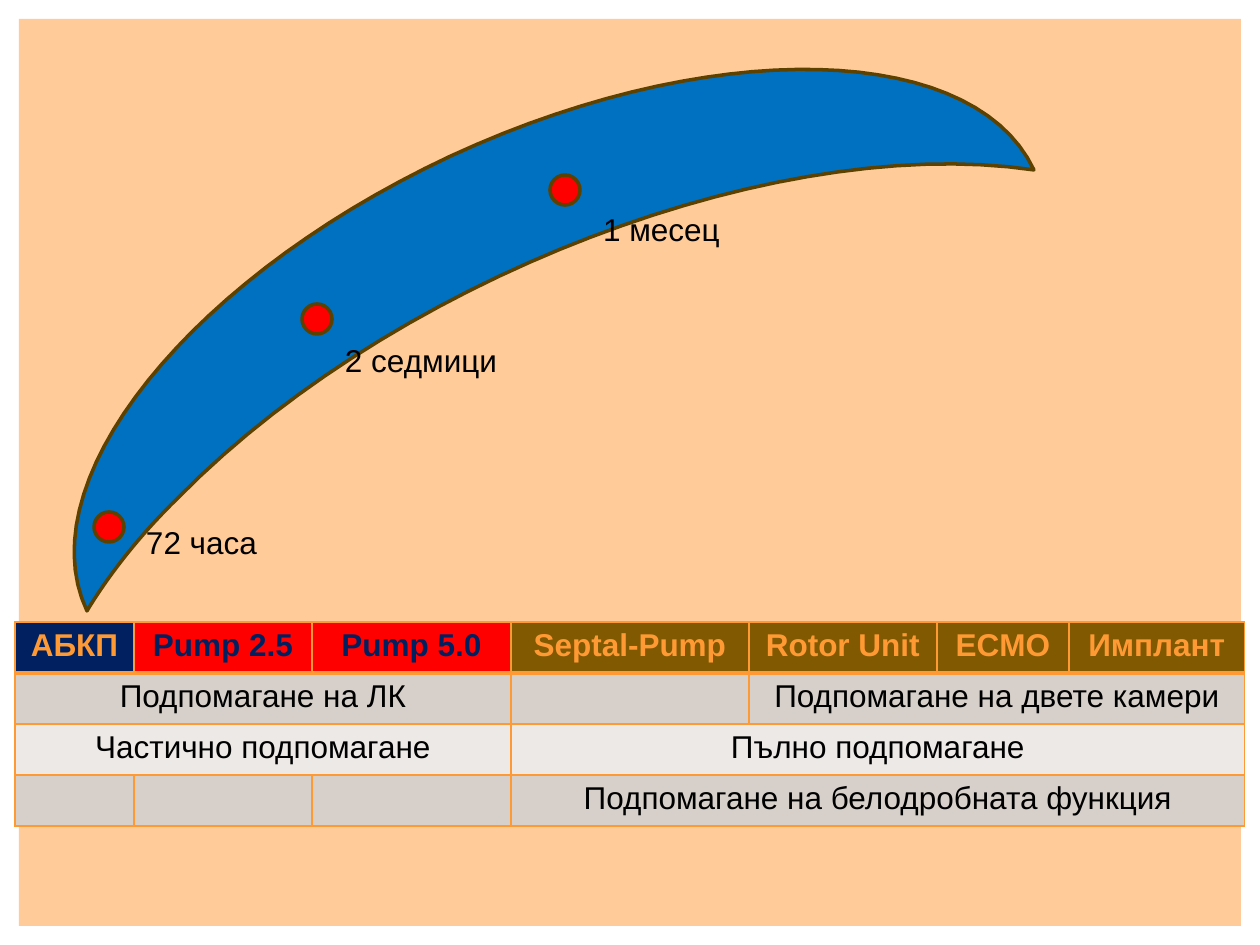
from lxml import etree
from pptx import Presentation
from pptx import util as u
from pptx.dml.color import RGBColor
from pptx.enum import shapes, text
from pptx.oxml import ns

EMU_PER_PX = 914400 / 126
STEPS = 30
FONT = "Arial"
ORANGE = RGBColor(0xFF, 0x99, 0x33)
NAVY = RGBColor(0x00, 0x20, 0x60)
RED = RGBColor(0xFF, 0x00, 0x00)
BROWN = RGBColor(0x80, 0x59, 0x00)
OUTLINE = RGBColor(0x5D, 0x41, 0x00)
BLUE = RGBColor(0x00, 0x70, 0xC0)
BLACK = RGBColor(0x00, 0x00, 0x00)
BAND_DARK = RGBColor(0xD7, 0xD0, 0xCA)
BAND_LIGHT = RGBColor(0xEC, 0xE9, 0xE6)

CRESCENT_START = (87, 611)
CRESCENT_CURVES = [
    ((26, 481), (190, 278), (451, 156)),
    ((713, 35), (974, 42), (1034, 170)),
    ((777, 132), (394, 278), (178, 498)),
    ((141, 534), (110, 573), (87, 611)),
]
# Marker left and top, label left, top and width, label
MILESTONES = [
    (94, 512, 140, 517, 134, "72 часа"),
    (302, 304, 339, 335, 166, "2 седмици"),
    (550, 175, 597, 204, 131, "1 месец"),
]
COLUMN_WIDTHS = [119, 178, 199, 238, 188, 132, 176]
ROW_HEIGHT = 51
HEADERS = [
    ("АБКП", NAVY, ORANGE),
    ("Pump 2.5", RED, NAVY),
    ("Pump 5.0", RED, NAVY),
    ("Septal-Pump", BROWN, ORANGE),
    ("Rotor Unit", BROWN, ORANGE),
    ("ECMO", BROWN, ORANGE),
    ("Имплант", BROWN, ORANGE),
]
BANDS = [BAND_DARK, BAND_LIGHT, BAND_DARK]
# Row, first column, last column, text
SPANS = [
    (1, 0, 2, "Подпомагане на ЛК"),
    (1, 4, 6, "Подпомагане на двете камери"),
    (2, 0, 2, "Частично подпомагане"),
    (2, 3, 6, "Пълно подпомагане"),
    (3, 3, 6, "Подпомагане на белодробната функция"),
]


def px(length):
    return u.Emu(round(length * EMU_PER_PX))


def paint(shape, fill, line=None):
    shape.shadow.inherit = False
    shape.fill.solid()
    shape.fill.fore_color.rgb = fill
    if line is None:
        shape.line.fill.background()
    else:
        shape.line.color.rgb = line
        shape.line.width = u.Pt(2)


def add_backdrop(slide):
    """Add the half-transparent panel behind everything."""
    panel = slide.shapes.add_shape(
        shapes.MSO_SHAPE.RECTANGLE, px(19), px(19), px(1222), px(907))
    paint(panel, ORANGE)
    color = panel.fill._xPr.find(".//" + ns.qn("a:srgbClr"))
    etree.SubElement(color, ns.qn("a:alpha"), val="50000")


def curve_points(start, controls):
    """Return points along a cubic curve, in EMU, without its start."""
    points = []
    for step in range(1, STEPS + 1):
        t = step / STEPS
        weights = ((1 - t) ** 3, 3 * t * (1 - t) ** 2, 3 * t * t * (1 - t), t ** 3)
        points.append(tuple(
            px(sum(weight * value for weight, value in zip(weights, axis)))
            for axis in zip(start, *controls)))
    return points


def add_crescent(slide):
    start = CRESCENT_START
    builder = slide.shapes.build_freeform(px(start[0]), px(start[1]))
    points = []
    for controls in CRESCENT_CURVES:
        points += curve_points(start, controls)
        start = controls[-1]
    builder.add_line_segments(points, close=True)
    paint(builder.convert_to_shape(), BLUE, OUTLINE)


def add_run(paragraph, words, color, bold=False):
    run = paragraph.add_run()
    run.text = words
    run.font.name = FONT
    run.font.size = u.Pt(18)
    run.font.bold = bold
    run.font.color.rgb = color


def set_margins(holder):
    holder.margin_left = holder.margin_right = px(6)
    holder.margin_top = holder.margin_bottom = px(6)


def add_marker(slide, left, top):
    marker = slide.shapes.add_shape(
        shapes.MSO_SHAPE.OVAL, px(left), px(top), px(30), px(30))
    paint(marker, RED, OUTLINE)


def add_label(slide, left, top, width, words):
    frame = slide.shapes.add_textbox(px(left), px(top), px(width), px(48)).text_frame
    set_margins(frame)
    frame.word_wrap = False
    frame.auto_size = text.MSO_AUTO_SIZE.SHAPE_TO_FIT_TEXT
    add_run(frame.paragraphs[0], words, BLACK)


def style_cell(cell, fill, top, bottom):
    """Set margins, fill and borders; top and bottom are line widths in points."""
    set_margins(cell)
    cell.fill.solid()
    cell.fill.fore_color.rgb = fill
    properties = cell._tc.get_or_add_tcPr()
    borders = [("a:lnL", 1), ("a:lnR", 1), ("a:lnT", top), ("a:lnB", bottom)]
    for index, (tag, width) in enumerate(borders):
        line = etree.Element(ns.qn(tag), w=str(u.Pt(width)))
        solid = etree.SubElement(line, ns.qn("a:solidFill"))
        etree.SubElement(solid, ns.qn("a:srgbClr"), val=str(ORANGE))
        properties.insert(index, line)


def write_cell(cell, words, color, bold=False):
    paragraph = cell.text_frame.paragraphs[0]
    paragraph.alignment = text.PP_ALIGN.CENTER
    add_run(paragraph, words, color, bold)


def add_device_table(slide):
    row_count = len(BANDS) + 1
    table = slide.shapes.add_table(
        row_count, len(HEADERS), px(15), px(622),
        px(sum(COLUMN_WIDTHS)), px(ROW_HEIGHT * row_count)).table
    for column, width in zip(table.columns, COLUMN_WIDTHS):
        column.width = px(width)
    for row in table.rows:
        row.height = px(ROW_HEIGHT)
    for column, (words, fill, color) in enumerate(HEADERS):
        style_cell(table.cell(0, column), fill, 1, 3)
        write_cell(table.cell(0, column), words, color, bold=True)
        for row, band in enumerate(BANDS, start=1):
            style_cell(table.cell(row, column), band, 3 if row == 1 else 1, 1)
    for row, first, last, words in SPANS:
        table.cell(row, first).merge(table.cell(row, last))
        write_cell(table.cell(row, first), words, BLACK)


def main():
    presentation = Presentation()
    presentation.slide_width, presentation.slide_height = px(1260), px(945)
    slide = presentation.slides.add_slide(presentation.slide_layouts[6])
    add_backdrop(slide)
    add_device_table(slide)
    add_crescent(slide)
    for left, top, *_ in MILESTONES:
        add_marker(slide, left, top)
    for _, _, *label in MILESTONES:
        add_label(slide, *label)
    presentation.save("out.pptx")


if __name__ == "__main__":
    main()
